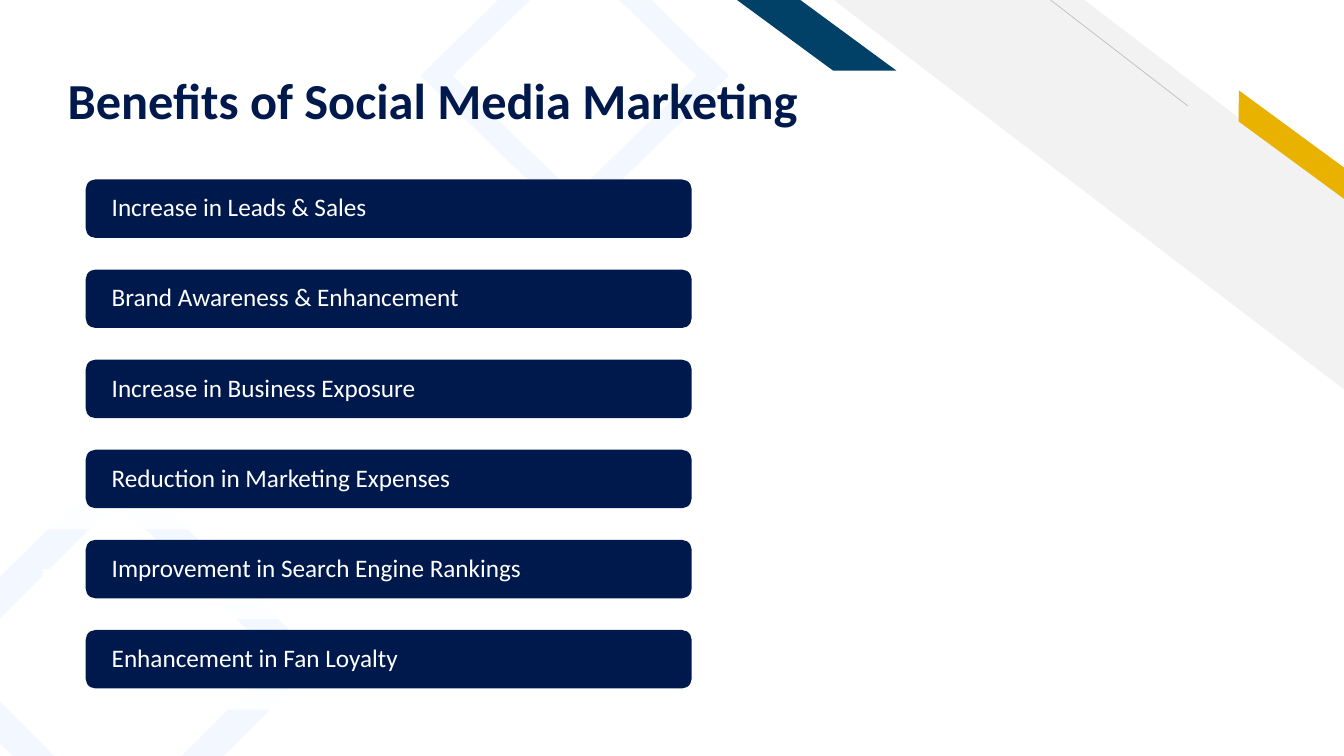
from pptx import Presentation
from pptx.dml.color import RGBColor
from pptx.enum.shapes import MSO_CONNECTOR, MSO_SHAPE
from pptx.enum.text import MSO_ANCHOR, MSO_AUTO_SIZE, PP_ALIGN
from pptx.oxml.ns import qn
from pptx.util import Inches, Pt
from lxml.etree import SubElement

TITLE = "Benefits of Social Media Marketing"
BENEFITS = [
    "Increase in Leads & Sales",
    "Brand Awareness & Enhancement",
    "Increase in Business Exposure",
    "Reduction in Marketing Expenses",
    "Improvement in Search Engine Rankings",
    "Enhancement in Fan Loyalty",
]
NAVY, WHITE, PALE_BLUE = "00194C", "FFFFFF", "D4E2FF"
FONT = "Calibri"

# center x, center y, then half width and half height of the outer and inner edges
DIAMONDS = [
    (5.7, 0.75, (1.53, 1.49), (1.21, 1.18)),
    (1.17, 6.55, (2, 1.99), (1.58, 1.58)),
]
# preset, left, top, width, height, adjustment, rotation, color
GRAY_STRIPE = (MSO_SHAPE.DIAGONAL_STRIPE, 8.27, 0, 5.07, 3.87, 0.51, 0, "F2F2F2")
GOLD_BAR = (MSO_SHAPE.PARALLELOGRAM, 12.07, 1.31, 1.48, 0.25, 0.72, 36.3, "EAB200")
TEAL_BAR = (MSO_SHAPE.PARALLELOGRAM, 7.31, 0, 1.58, 0.7, 1.36, 0, "014067")

FIRST_TOP, LAST_TOP = 1.78, 6.25
PITCH = (LAST_TOP - FIRST_TOP) / (len(BENEFITS) - 1)


def rgb(value):
    return RGBColor.from_string(value)


def paint(sp, color, opacity=100):
    """Give a shape a flat fill with no line or shadow."""
    sp.shadow.inherit = False
    sp.line.fill.background()
    sp.fill.solid()
    sp.fill.fore_color.rgb = rgb(color)
    if opacity < 100:
        tint = sp.element.spPr.find(qn("a:solidFill"))[0]
        SubElement(tint, qn("a:alpha"), val=str(opacity * 1000))


def add_box(s, preset, left, top, width, height, color, opacity=100):
    sp = s.shapes.add_shape(preset, *map(Inches, (left, top, width, height)))
    paint(sp, color, opacity)
    return sp


def add_diamond(s, cx, cy, outer, inner):
    """Draw a diamond-shaped ring."""
    def corners(half):
        w, h = half
        points = [(cx, cy - h), (cx + w, cy), (cx, cy + h), (cx - w, cy)]
        return [(Inches(x), Inches(y)) for x, y in points]

    ring, hole = corners(outer), corners(inner)[::-1]
    builder = s.shapes.build_freeform(*ring[0])
    builder.add_line_segments(ring[1:])
    builder.move_to(*hole[0])
    builder.add_line_segments(hole[1:])
    paint(builder.convert_to_shape(), PALE_BLUE, 27)


def add_slanted(s, preset, left, top, width, height, adjustment, rotation, color):
    """Draw a preset shape mirrored left to right."""
    sp = add_box(s, preset, left, top, width, height, color)
    sp.adjustments[0] = adjustment
    sp.rotation = rotation
    sp.element.spPr.xfrm.set("flipH", "1")


def add_hairline(s):
    line = s.shapes.add_connector(
        MSO_CONNECTOR.STRAIGHT, *map(Inches, (11.78, 1.05, 10.42, 0)))
    line.line.color.rgb = rgb("BFBFBF")
    line.line.width = Pt(0.5)
    SubElement(line.element.spPr, qn("a:effectLst"))


def set_text(sp, text, size, color, anchor, insets, bold=False):
    tf = sp.text_frame
    tf.text = text
    tf.word_wrap = True
    tf.auto_size = MSO_AUTO_SIZE.NONE
    tf.vertical_anchor = anchor
    tf.margin_left, tf.margin_top, tf.margin_right, tf.margin_bottom = map(Inches, insets)
    p = tf.paragraphs[0]
    p.alignment = PP_ALIGN.LEFT
    p.line_spacing = 0.9
    p.font.name, p.font.size, p.font.bold = FONT, Pt(size), bold
    p.font.color.rgb = rgb(color)


def add_title(s):
    title = s.shapes.title
    title.left, title.top, title.width, title.height = map(Inches, (0.57, 0.79, 9.11, 0.5))
    set_text(title, TITLE, 36, NAVY, MSO_ANCHOR.BOTTOM, (0.1, 0.05, 0.1, 0), bold=True)
    title.element.getparent().append(title.element)  # in front of the decoration


def add_benefit(s, text, top):
    add_box(s, MSO_SHAPE.RECTANGLE, 0.42, top + 0.29, 8.58, 0.5, WHITE, 90)
    pill = add_box(s, MSO_SHAPE.ROUNDED_RECTANGLE, 0.85, top, 6.01, 0.58, NAVY)
    set_text(pill, text, 18, WHITE, MSO_ANCHOR.MIDDLE, (0.23, 0, 0.23, 0))


def main():
    prs = Presentation()
    prs.slide_width, prs.slide_height = Inches(13.33), Inches(7.5)
    s = prs.slides.add_slide(prs.slide_layouts[5])
    add_diamond(s, *DIAMONDS[0])
    add_slanted(s, *GRAY_STRIPE)
    add_hairline(s)
    add_slanted(s, *GOLD_BAR)
    add_slanted(s, *TEAL_BAR)
    add_diamond(s, *DIAMONDS[1])
    add_title(s)
    for i, text in enumerate(BENEFITS):
        add_benefit(s, text, FIRST_TOP + i * PITCH)
    prs.save("out.pptx")


if __name__ == "__main__":
    main()
